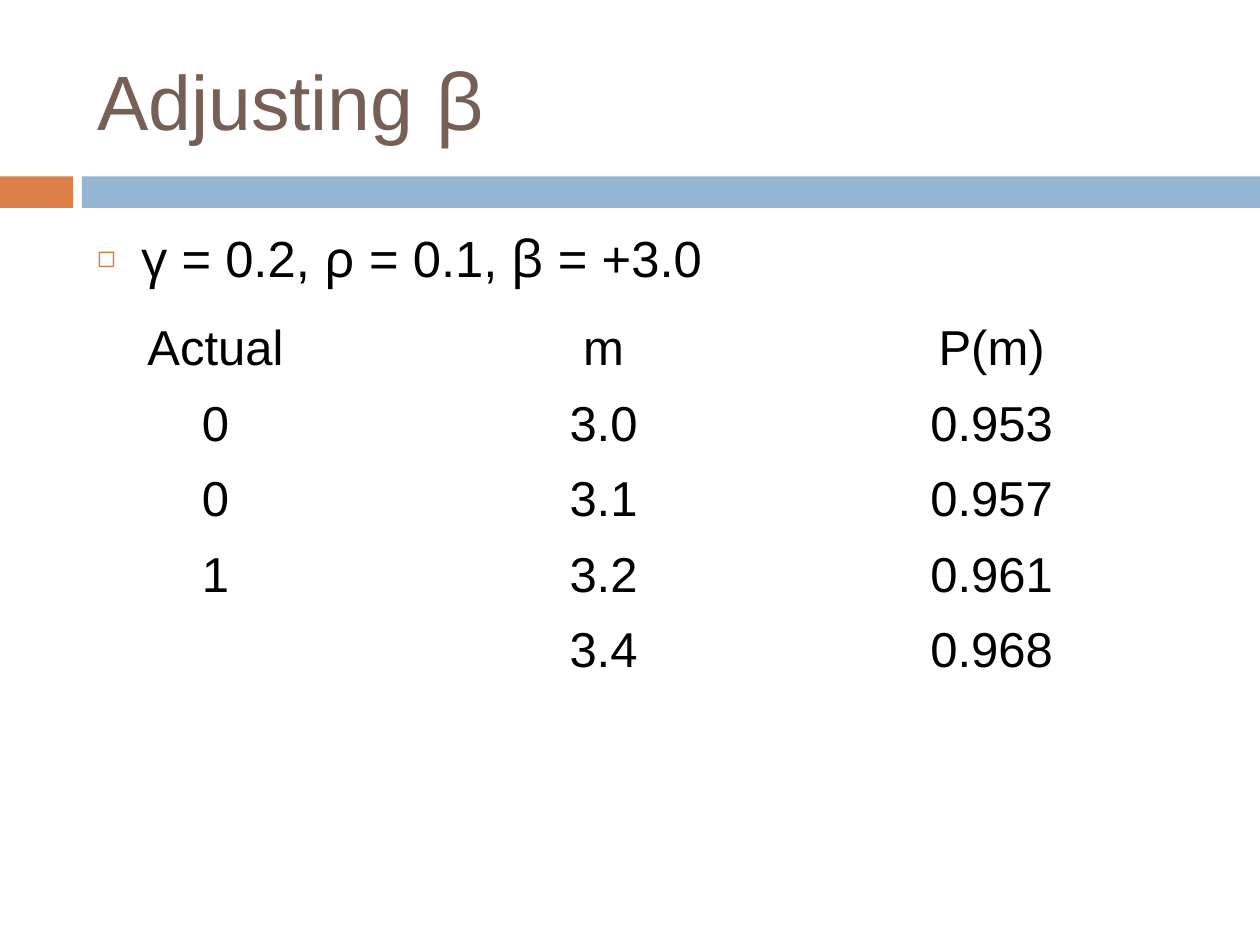
from dataclasses import dataclass

from lxml import etree
from pptx import Presentation
from pptx import util as u
from pptx.dml.color import RGBColor
from pptx.enum import shapes, text
from pptx.oxml.ns import qn


@dataclass(frozen=True)
class Theme:
    latin: str = "Arial"
    greek: str = "Noto Sans"
    heading: RGBColor = RGBColor(0x77, 0x5F, 0x55)
    ink: RGBColor = RGBColor(0, 0, 0)
    accent: RGBColor = RGBColor(0xDD, 0x80, 0x47)
    band: RGBColor = RGBColor(0x94, 0xB6, 0xD2)
    title_size: int = 44
    body_size: int = 29
    table_size: int = 28


class SlideBuilder:
    def __init__(self, slide, theme):
        self.slide = slide
        self.theme = theme

    def bar(self, left, width, color):
        bar = self.slide.shapes.add_shape(
            shapes.MSO_SHAPE.RECTANGLE,
            u.Inches(left), u.Inches(1.4), u.Inches(width), u.Inches(0.25))
        bar.shadow.inherit = False
        bar.fill.solid()
        bar.fill.fore_color.rgb = color
        bar.line.fill.background()

    def place(self, holder, top, height):
        holder.left, holder.top = u.Inches(0.67), u.Inches(top)
        holder.width, holder.height = u.Inches(8.92), u.Inches(height)
        holder.text_frame.auto_size = text.MSO_AUTO_SIZE.NONE
        return holder.text_frame

    def add_words(self, paragraph, words, size, color):
        """Add one run per script, since Greek letters have their own font."""
        paragraph.font.size = u.Pt(size)
        paragraph.font.color.rgb = color
        for word, font in words:
            run = paragraph.add_run()
            run.text = word
            run.font.name = font
            run.font.size = u.Pt(size)
            run.font.color.rgb = color

    def title(self, words):
        frame = self.place(self.slide.shapes.title, 0.25, 1.08)
        frame.vertical_anchor = text.MSO_ANCHOR.MIDDLE
        heading = frame.paragraphs[0]
        heading.alignment = text.PP_ALIGN.LEFT
        self.add_words(heading, words, self.theme.title_size,
                       self.theme.heading)

    def bullet(self, words):
        frame = self.place(self.slide.placeholders[1], 1.75, 4.92)
        item = frame.paragraphs[0]
        item.space_before = u.Pt(0)
        props = item._p.get_or_add_pPr()
        props.set("marL", str(u.Inches(0.35)))
        props.set("indent", str(-u.Inches(0.35)))
        color = etree.SubElement(props, qn("a:buClr"))
        etree.SubElement(color, qn("a:srgbClr"), val=str(self.theme.accent))
        etree.SubElement(props, qn("a:buSzPct"), val="60000")
        etree.SubElement(props, qn("a:buFont"), typeface=self.theme.greek)
        etree.SubElement(props, qn("a:buChar"), char="◻")
        self.add_words(item, words, self.theme.body_size, self.theme.ink)

    def table(self, rows, row_count):
        """Fill the top of a plain grid; the rows left over stay empty."""
        column_width, row_height = 3.08, 0.6
        columns = len(rows[0])
        grid = self.slide.shapes.add_table(
            row_count, columns, u.Inches(0.17), u.Inches(2.5),
            u.Inches(column_width * columns),
            u.Inches(row_height * row_count)).table
        grid.first_row = grid.horz_banding = False
        for cell in grid.iter_cells():
            cell.fill.background()
        for r, row in enumerate(rows):
            for c, value in enumerate(row):
                if not value:
                    continue
                entry = grid.cell(r, c).text_frame.paragraphs[0]
                entry.text = value
                entry.alignment = text.PP_ALIGN.CENTER
                entry.font.name = self.theme.latin
                entry.font.size = u.Pt(self.theme.table_size)
                entry.font.color.rgb = self.theme.ink


def main():
    deck = Presentation()
    deck.slide_width, deck.slide_height = u.Inches(10), u.Inches(7.5)
    theme = Theme()
    builder = SlideBuilder(deck.slides.add_slide(deck.slide_layouts[1]), theme)

    builder.bar(0, 0.58, theme.accent)
    builder.bar(0.65, 9.35, theme.band)
    builder.title([("Adjusting ", theme.latin), ("β", theme.greek)])
    parameters = [("γ", " = 0.2, "), ("ρ", " = 0.1, "), ("β", " = +3.0")]
    builder.bullet([
        run for symbol, value in parameters
        for run in ((symbol, theme.greek), (value, theme.latin))])
    builder.table([
        ("Actual", "m", "P(m)"),
        ("0", "3.0", "0.953"),
        ("0", "3.1", "0.957"),
        ("1", "3.2", "0.961"),
        ("", "3.4", "0.968"),
    ], row_count=8)
    deck.save("out.pptx")


if __name__ == "__main__":
    main()
